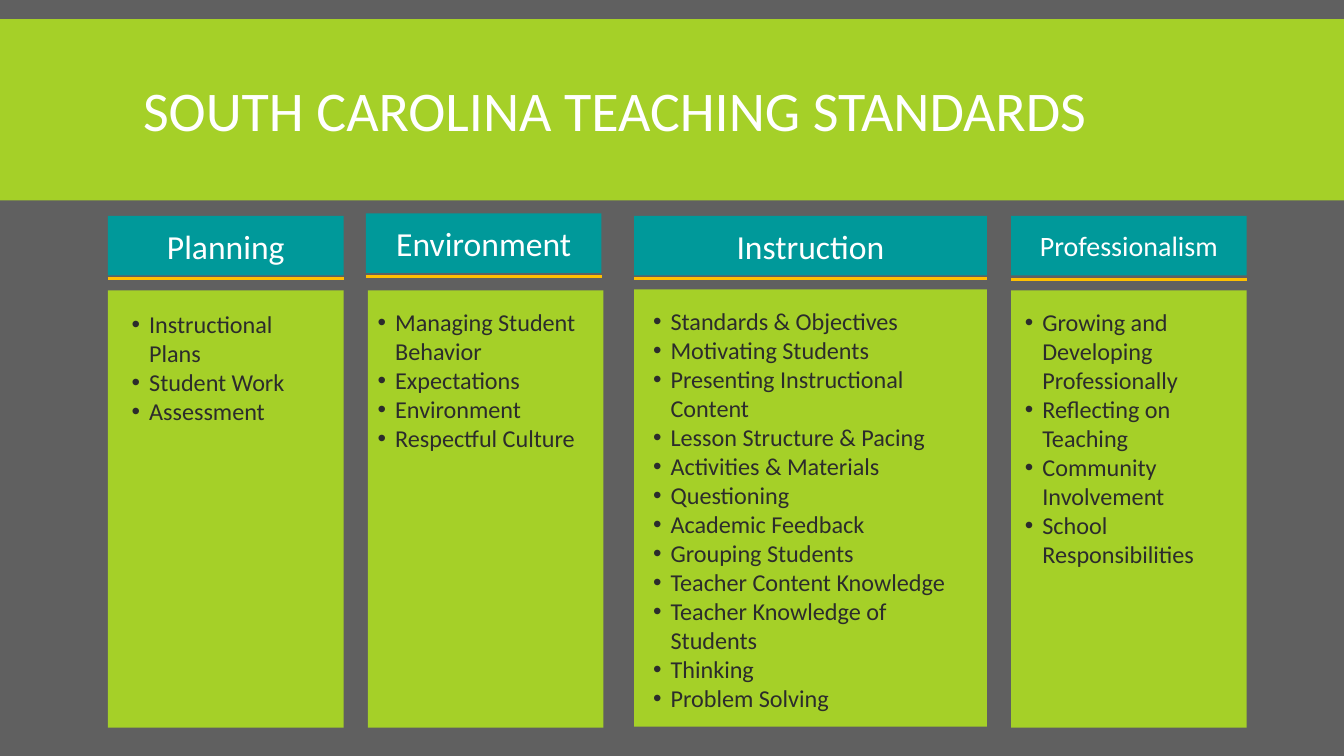
from dataclasses import dataclass

from lxml import etree
from pptx import Presentation
from pptx.dml.color import RGBColor
from pptx.enum.shapes import MSO_CONNECTOR, MSO_SHAPE
from pptx.enum.text import MSO_ANCHOR, MSO_AUTO_SIZE, PP_ALIGN
from pptx.oxml.ns import qn
from pptx.shapes.autoshape import Shape
from pptx.slide import Slide
from pptx.text.text import Font
from pptx.util import Cm, Pt

RECTANGLE = MSO_SHAPE.RECTANGLE
STRAIGHT = MSO_CONNECTOR.STRAIGHT
MIDDLE = MSO_ANCHOR.MIDDLE
LEFT, CENTER = PP_ALIGN.LEFT, PP_ALIGN.CENTER
NO_AUTOFIT = MSO_AUTO_SIZE.NONE
TITLE_ONLY = 5


@dataclass(frozen=True)
class Theme:
    font: str = "Calibri"
    background: str = "606060"
    panel: str = "A5D028"
    heading: str = "00999A"
    rule: str = "FFC000"
    light: str = "FFFFFF"
    dark: str = "2C2C2C"
    title_size: float = 40
    heading_size: float = 24
    small_heading_size: float = 20
    body_size: float = 17.3
    rule_width: float = 2.25


@dataclass(frozen=True)
class Domain:
    """One teaching domain; all lengths are in centimetres."""
    name: str
    indicators: tuple[str, ...]
    left: float
    panel_left: float
    width: float
    list_left: float
    list_top: float
    list_width: float
    list_height: float
    heading_top: float = 5.44
    rule_top: float = 7.01
    panel_top: float = 7.32
    heading_size: float = 24


THEME = Theme()
SLIDE_WIDTH, SLIDE_HEIGHT = 33.87, 19.05
HEADING_HEIGHT, PANEL_HEIGHT = 1.5, 11.02
BULLET_INDENT = 0.44

DOMAINS = (
    Domain("Planning",
           ("Instructional Plans", "Student Work", "Assessment"),
           left=2.72, panel_left=2.72, width=5.94,
           list_left=3.07, list_top=7.67, list_width=5.23, list_height=3.23),
    Domain("Environment",
           ("Managing Student Behavior", "Expectations", "Environment",
            "Respectful Culture"),
           left=9.22, panel_left=9.27, width=5.94,
           list_left=9.27, list_top=7.62, list_width=5.94, list_height=3.96,
           heading_top=5.38, rule_top=6.96),
    Domain("Instruction",
           ("Standards & Objectives", "Motivating Students",
            "Presenting Instructional Content", "Lesson Structure & Pacing",
            "Activities & Materials", "Questioning", "Academic Feedback",
            "Grouping Students", "Teacher Content Knowledge",
            "Teacher Knowledge of Students", "Thinking", "Problem Solving"),
           left=15.98, panel_left=15.98, width=8.89,
           list_left=16.21, list_top=7.59, list_width=8.59, list_height=10.62,
           panel_top=7.29),
    Domain("Professionalism",
           ("Growing and Developing Professionally", "Reflecting on Teaching",
            "Community Involvement", "School Responsibilities"),
           left=25.48, panel_left=25.48, width=5.94,
           list_left=25.58, list_top=7.62, list_width=5.94, list_height=6.93,
           rule_top=7.04, heading_size=THEME.small_heading_size),
)


def style_font(font: Font, size: float, color: str) -> None:
    font.name = THEME.font
    font.size = Pt(size)
    font.color.rgb = RGBColor.from_string(color)


def add_block(slide: Slide, left: float, top: float, width: float,
              height: float, color: str) -> Shape:
    block = slide.shapes.add_shape(RECTANGLE, Cm(left), Cm(top), Cm(width), Cm(height))
    block.shadow.inherit = False
    block.fill.solid()
    block.fill.fore_color.rgb = RGBColor.from_string(color)
    block.line.fill.background()
    return block


def add_heading(slide: Slide, domain: Domain) -> None:
    heading = add_block(slide, domain.left, domain.heading_top, domain.width,
                        HEADING_HEIGHT, THEME.heading)
    heading.text_frame.vertical_anchor = MIDDLE
    label = heading.text_frame.paragraphs[0]
    label.text = domain.name
    label.alignment = CENTER
    style_font(label.font, domain.heading_size, THEME.light)


def add_rule(slide: Slide, domain: Domain) -> None:
    rule = slide.shapes.add_connector(
        STRAIGHT, Cm(domain.left), Cm(domain.rule_top),
        Cm(domain.left + domain.width), Cm(domain.rule_top))
    rule.line.color.rgb = RGBColor.from_string(THEME.rule)
    rule.line.width = Pt(THEME.rule_width)
    etree.SubElement(rule.element.spPr, qn("a:effectLst"))


def add_indicators(slide: Slide, domain: Domain) -> None:
    frame = slide.shapes.add_textbox(
        Cm(domain.list_left), Cm(domain.list_top),
        Cm(domain.list_width), Cm(domain.list_height)).text_frame
    frame.word_wrap = True
    for position, indicator in enumerate(domain.indicators):
        item = frame.add_paragraph() if position else frame.paragraphs[0]
        item.text = indicator
        style_font(item.font, THEME.body_size, THEME.dark)
        properties = item._p.get_or_add_pPr()
        properties.set("marL", str(Cm(BULLET_INDENT)))
        properties.set("indent", str(-Cm(BULLET_INDENT)))
        bullet_font = etree.Element(qn("a:buFont"), typeface="Arial")
        bullet = etree.Element(qn("a:buChar"), char="•")
        properties.insert(0, bullet_font)
        bullet_font.addnext(bullet)


def add_title(slide: Slide) -> None:
    band = add_block(slide, 0, 0.48, SLIDE_WIDTH, 4.57, THEME.panel)
    title = slide.shapes.title
    title.left, title.top = Cm(3.35), Cm(0.79)
    title.width, title.height = Cm(27.18), Cm(4.19)
    band.element.addnext(title.element)  # the title sits in front of its band
    title.text_frame.auto_size = NO_AUTOFIT
    title.text_frame.vertical_anchor = MIDDLE
    heading = title.text_frame.paragraphs[0]
    heading.text = "SOUTH CAROLINA TEACHING STANDARDS"
    heading.alignment = LEFT
    heading.line_spacing = 0.85
    style_font(heading.font, THEME.title_size, THEME.light)


def main() -> None:
    deck = Presentation()
    deck.slide_width, deck.slide_height = Cm(SLIDE_WIDTH), Cm(SLIDE_HEIGHT)
    slide = deck.slides.add_slide(deck.slide_layouts[TITLE_ONLY])

    # Background and title band
    slide.background.fill.solid()
    slide.background.fill.fore_color.rgb = RGBColor.from_string(THEME.background)
    add_title(slide)

    # One column per teaching domain
    for domain in DOMAINS:
        add_block(slide, domain.panel_left, domain.panel_top, domain.width,
                  PANEL_HEIGHT, THEME.panel)
        add_indicators(slide, domain)
        add_heading(slide, domain)
        add_rule(slide, domain)

    deck.save("out.pptx")


if __name__ == "__main__":
    main()
